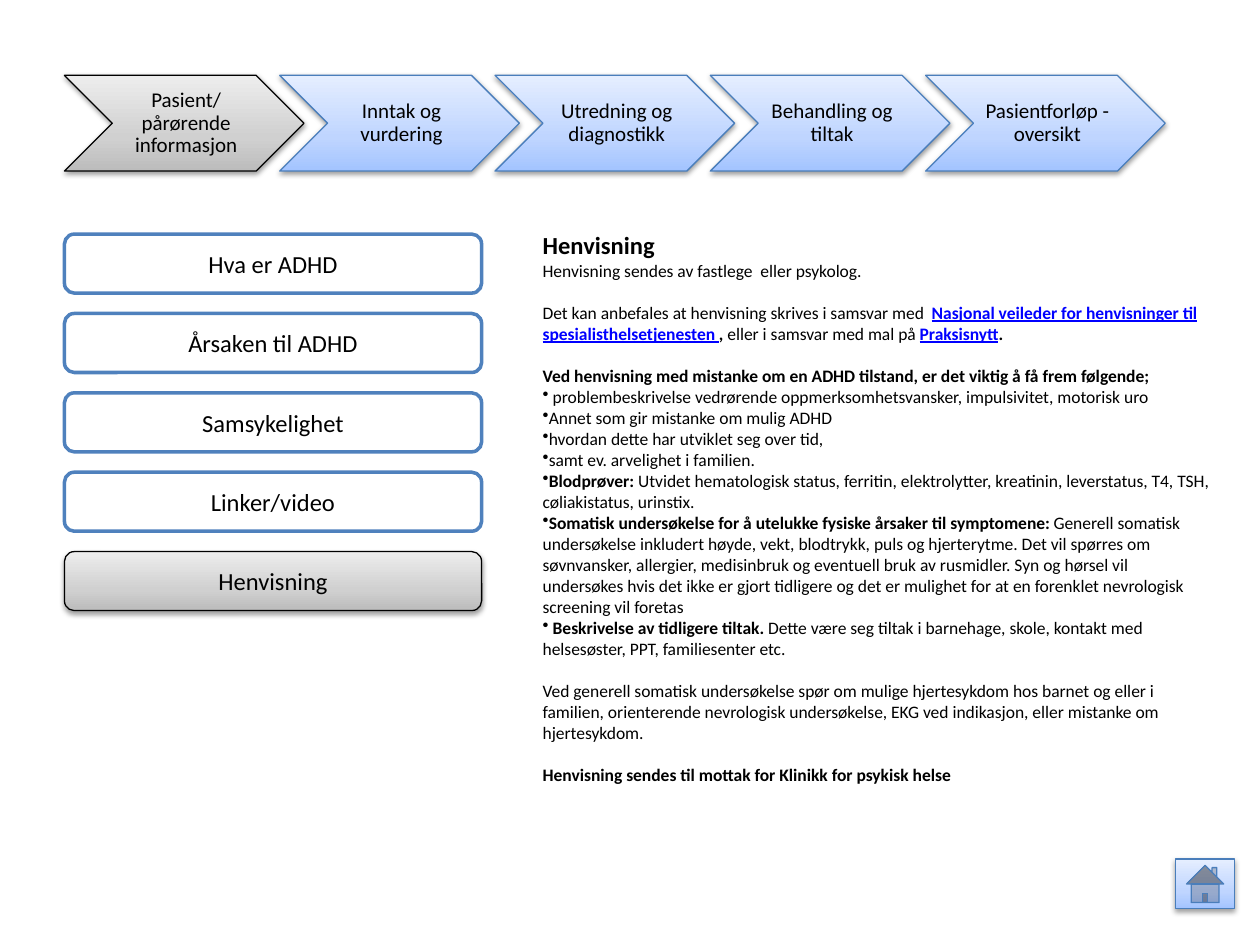
"""Build the ADHD referral slide with its pathway steps, topic menu and guidance text."""
from dataclasses import dataclass
from typing import NamedTuple

from pptx import Presentation
from pptx import oxml
from pptx.dml.color import RGBColor
from pptx.enum import shapes as kinds
from pptx.enum import text as align
from pptx.oxml import ns
from pptx.util import Cm, Pt


class Surface(NamedTuple):
    """Gradient from bottom to top, with its outline colour."""
    stops: tuple[tuple[int, str], ...]
    outline: str


@dataclass(frozen=True)
class Theme:
    """Colours and type sizes of the slide."""
    font: str = "Calibri"
    ink: str = "000000"
    link: str = "0000FF"
    paper: str = "FFFFFF"
    frame: str = "4F81BD"
    heading: int = 14
    step: int = 12
    body: int = 10
    active: Surface = Surface(((0, "BCBCBC"), (35, "D0D0D0"), (100, "EDEDED")), "000000")
    regular: Surface = Surface(((0, "A3C4FF"), (35, "BFD5FF"), (100, "E5EEFF")), "4A7EBB")


class Area(NamedTuple):
    """Left, top, width and height in centimetres."""
    left: float
    top: float
    width: float
    height: float

    def shifted(self, right: float = 0, down: float = 0) -> "Area":
        """Return the same area moved by the given distances."""
        return self._replace(left=self.left + right, top=self.top + down)

    def lengths(self) -> tuple[Cm, ...]:
        """Return the four measures as slide lengths."""
        return tuple(Cm(value) for value in self)


class Span(NamedTuple):
    """A stretch of text in one style."""
    wording: str
    bold: bool = False
    link: bool = False


@dataclass(frozen=True)
class Passage:
    """One paragraph of the guidance text."""
    spans: tuple[Span, ...]
    size: int
    bullet: bool = False
    gap: bool = False


THEME = Theme()
FIRST_STEP = Area(1.3, 1.52, 4.83, 1.93)
STEP_PITCH = 4.34
FIRST_TOPIC = Area(1.3, 4.72, 8.41, 1.19)
TOPIC_PITCH = 1.6
GUIDANCE = Area(10.69, 4.52, 14, 12.4)
HOME = Area(23.7, 17.32, 1.19, 1)

STEPS = ("Pasient/ pårørende informasjon", "Inntak og vurdering", "Utredning og diagnostikk",
         "Behandling og tiltak", "Pasientforløp - oversikt")
TOPICS = ("Hva er ADHD", "Årsaken til ADHD", "Samsykelighet", "Linker/video", "Henvisning")


def plain(*spans: Span, gap: bool = False) -> Passage:
    """Return an ordinary body paragraph."""
    return Passage(spans, THEME.body, gap=gap)


def bullet(*spans: Span) -> Passage:
    """Return a bulleted body paragraph."""
    return Passage(spans, THEME.body, bullet=True)


PASSAGES = (
    Passage((Span("Henvisning", bold=True),), THEME.heading),
    plain(Span("Henvisning sendes av fastlege  eller psykolog.")),
    plain(Span("Det kan anbefales at henvisning skrives i samsvar med  "),
          Span("Nasjonal veileder for henvisninger til spesialisthelsetjenesten ", True, True),
          Span(", ", True), Span("eller i samsvar med mal på "),
          Span("Praksisnytt", True, True), Span(".", True), gap=True),
    plain(Span("Ved henvisning med mistanke om en ADHD tilstand, er det viktig å få frem "
               "følgende;", True), gap=True),
    bullet(Span(" problembeskrivelse vedrørende oppmerksomhetsvansker, impulsivitet, motorisk uro")),
    bullet(Span("Annet som gir mistanke om mulig ADHD")),
    bullet(Span("hvordan dette har utviklet seg over tid,")),
    bullet(Span("samt ev. arvelighet i familien.")),
    bullet(Span("Blodprøver:", True),
           Span(" Utvidet hematologisk status, ferritin, elektrolytter, kreatinin, leverstatus, "
                "T4, TSH, cøliakistatus, urinstix.")),
    bullet(Span("Somatisk undersøkelse for å utelukke fysiske årsaker til symptomene:", True),
           Span(" Generell somatisk undersøkelse inkludert høyde, vekt, blodtrykk, puls og "
                "hjerterytme. Det vil spørres om søvnvansker, allergier, medisinbruk og eventuell "
                "bruk av rusmidler. Syn og hørsel vil undersøkes hvis det ikke er gjort tidligere "
                "og det er mulighet for at en forenklet nevrologisk screening vil foretas")),
    bullet(Span(" Beskrivelse av tidligere tiltak. ", True),
           Span("Dette være seg tiltak i barnehage, skole, kontakt med helsesøster, PPT, "
                "familiesenter etc.")),
    plain(Span("Ved generell somatisk undersøkelse spør om mulige hjertesykdom hos barnet og eller "
               "i familien, orienterende nevrologisk undersøkelse, EKG ved indikasjon, eller "
               "mistanke om hjertesykdom."), gap=True),
    plain(Span("Henvisning sendes til mottak for Klinikk for psykisk helse", True), gap=True),
)


def colour(code: str) -> RGBColor:
    """Turn a hex code into a colour."""
    return RGBColor.from_string(code)


def add_span(paragraph, span: Span, size: int) -> None:
    """Add one styled run to a paragraph."""
    run = paragraph.add_run()
    run.text = span.wording
    run.font.name = THEME.font
    run.font.size = Pt(size)
    run.font.bold = span.bold
    run.font.underline = span.link
    run.font.color.rgb = colour(THEME.link if span.link else THEME.ink)


def raise_surface(shape, surface: Surface) -> None:
    """Give a shape a three-stop gradient, thin outline and soft shadow."""
    shape.fill.gradient()
    shape.fill.gradient_angle = 90
    stops = shape._element.spPr.find(".//" + ns.qn("a:gsLst"))
    stops.clear()
    for position, code in surface.stops:
        stops.append(oxml.parse_xml(
            f'<a:gs {ns.nsdecls("a")} pos="{position * 1000}"><a:srgbClr val="{code}"/></a:gs>'))
    shape.line.color.rgb = colour(surface.outline)
    shape.line.width = Pt(0.75)
    shape._element.spPr.find(ns.qn("a:effectLst")).append(oxml.parse_xml(
        f'<a:outerShdw {ns.nsdecls("a")} blurRad="40000" dist="20000" dir="5400000" '
        'rotWithShape="0"><a:srgbClr val="000000"><a:alpha val="38000"/></a:srgbClr></a:outerShdw>'))


def add_panel(slide, kind: kinds.MSO_SHAPE, area: Area, surface: Surface | None):
    """Add a raised panel, or a framed white one when no surface is given."""
    panel = slide.shapes.add_shape(kind, *area.lengths())
    panel.shadow.inherit = False
    if surface:
        raise_surface(panel, surface)
    else:
        panel.fill.solid()
        panel.fill.fore_color.rgb = colour(THEME.paper)
        panel.line.color.rgb = colour(THEME.frame)
        panel.line.width = Pt(2)
    return panel


def add_label(panel, wording: str, size: int):
    """Centre a label in a panel and return its paragraph."""
    panel.text_frame.word_wrap = True
    panel.text_frame.vertical_anchor = align.MSO_ANCHOR.MIDDLE
    paragraph = panel.text_frame.paragraphs[0]
    paragraph.alignment = align.PP_ALIGN.CENTER
    add_span(paragraph, Span(wording), size)
    return paragraph


def add_step(slide, area: Area, wording: str, surface: Surface) -> None:
    """Add one chevron of the pathway."""
    chevron = add_panel(slide, kinds.MSO_SHAPE.CHEVRON, area, surface)
    frame = chevron.text_frame
    frame.margin_left = Cm(0.13)
    frame.margin_top = frame.margin_right = frame.margin_bottom = Cm(0.05)
    add_label(chevron, wording, THEME.step).line_spacing = 0.9


def add_guidance(slide, area: Area, passages: tuple[Passage, ...]) -> None:
    """Add the guidance text."""
    frame = slide.shapes.add_textbox(*area.lengths()).text_frame
    frame.word_wrap = True
    for index, passage in enumerate(passages):
        paragraph = frame.add_paragraph() if index else frame.paragraphs[0]
        if passage.bullet:
            paragraph._p.get_or_add_pPr().append(
                oxml.parse_xml(f'<a:buChar {ns.nsdecls("a")} char="•"/>'))
        if passage.gap:
            paragraph.space_before = Pt(12)
        for span in passage.spans:
            add_span(paragraph, span, passage.size)


def main() -> None:
    """Build and save the slide."""
    deck = Presentation()
    deck.slide_width, deck.slide_height = Cm(25.4), Cm(19.05)
    slide = deck.slides.add_slide(deck.slide_layouts[6])
    add_panel(slide, kinds.MSO_SHAPE.ACTION_BUTTON_HOME, HOME, THEME.regular)
    add_guidance(slide, GUIDANCE, PASSAGES)
    for row, topic in enumerate(TOPICS):
        surface = THEME.active if topic == "Henvisning" else None
        area = FIRST_TOPIC.shifted(down=row * TOPIC_PITCH)
        add_label(add_panel(slide, kinds.MSO_SHAPE.ROUNDED_RECTANGLE, area, surface),
                  topic, THEME.heading)
    for column, step in enumerate(STEPS):
        surface = THEME.regular if column else THEME.active
        add_step(slide, FIRST_STEP.shifted(right=column * STEP_PITCH), step, surface)
    deck.save("out.pptx")


if __name__ == "__main__":
    main()
